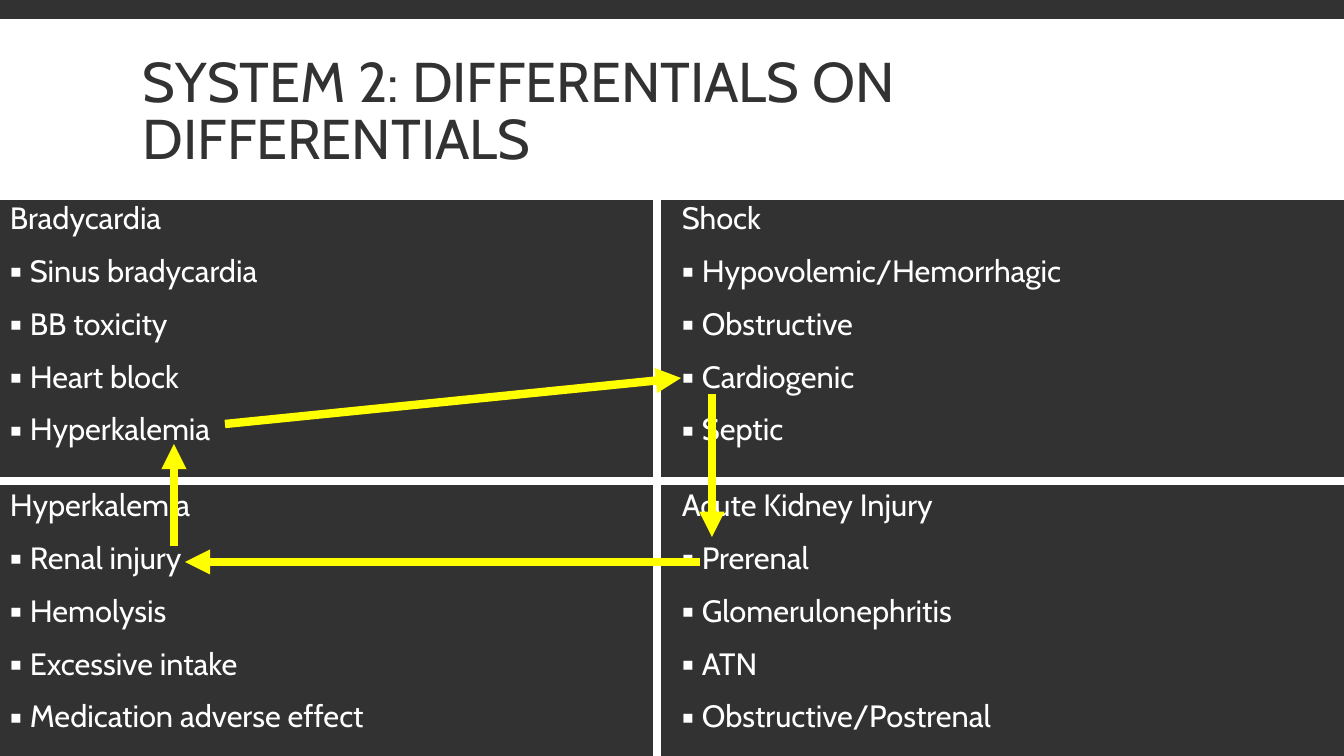
"""Build a slide that links four differential-diagnosis lists with arrows."""
from lxml import etree
from pptx import Presentation
from pptx.dml.color import RGBColor
from pptx.enum.shapes import MSO_CONNECTOR, MSO_SHAPE
from pptx.enum.text import MSO_ANCHOR
from pptx.oxml.ns import qn
from pptx.util import Emu, Pt

STRAIGHT = MSO_CONNECTOR.STRAIGHT
RECTANGLE = MSO_SHAPE.RECTANGLE
TOP, MIDDLE = MSO_ANCHOR.TOP, MSO_ANCHOR.MIDDLE

TITLE = "SYSTEM 2: DIFFERENTIALS ON DIFFERENTIALS"
DIFFERENTIALS = [
    ("Bradycardia", ["Sinus bradycardia", "BB toxicity", "Heart block", "Hyperkalemia"]),
    ("Shock", ["Hypovolemic/Hemorrhagic", "Obstructive", "Cardiogenic", "Septic"]),
    ("Hyperkalemia", ["Renal injury", "Hemolysis", "Excessive intake",
                      "Medication adverse effect"]),
    ("Acute Kidney Injury", ["Prerenal", "Glomerulonephritis", "ATN",
                             "Obstructive/Postrenal"]),
]
CAUSE_ARROWS = [
    ((712, 394), (712, 537)),
    ((700, 562), (185, 562)),
    ((174, 546), (174, 444)),
    ((225, 424), (681, 378)),
]

THEME = {
    "dark": RGBColor(0x32, 0x32, 0x32),
    "light": RGBColor(0xFF, 0xFF, 0xFF),
    "arrow": RGBColor(0xFF, 0xFF, 0x00),
    "font": "Cabin",
    "title_size": Pt(40),
    "list_size": Pt(22),
    "line_width": Pt(6),
}
WIDTH, HEIGHT = 1344, 756
BAND_TOP, BAND_HEIGHT = 19, 181
TITLE_BOX = (133, 31, 1079, 166)
GRID_TOP, QUADRANT_HEIGHT = 198, 287
DIVIDER_X, DIVIDER_Y = 657, 481
INDENT = 20


def px(length):
    """Turn px into EMU."""
    return Emu(round(length * 914400 / 100.8))


def add_text(slide, box, paragraphs, *, size, color, anchor=TOP, spacing=0.9,
             before=0, after=0, bulleted_from=None):
    """Add a text box, with bullets from the given paragraph on."""
    frame = slide.shapes.add_textbox(*map(px, box)).text_frame
    frame.word_wrap = True
    frame.vertical_anchor = anchor
    for index, wording in enumerate(paragraphs):
        paragraph = frame.paragraphs[0] if index == 0 else frame.add_paragraph()
        paragraph.line_spacing = spacing
        paragraph.space_before, paragraph.space_after = Pt(before), Pt(after)
        run = paragraph.add_run()
        run.text = wording
        run.font.name, run.font.size = THEME["font"], size
        run.font.color.rgb = color
        if bulleted_from is not None and index >= bulleted_from:
            add_bullet(paragraph, color)


def add_bullet(paragraph, color):
    """Give a paragraph a hanging square bullet."""
    properties = paragraph._p.get_or_add_pPr()
    properties.set("marL", str(px(INDENT)))
    properties.set("indent", str(-px(INDENT)))
    bullet_color = etree.SubElement(properties, qn("a:buClr"))
    etree.SubElement(bullet_color, qn("a:srgbClr"), val=str(color))
    etree.SubElement(properties, qn("a:buFont"), typeface=THEME["font"])
    etree.SubElement(properties, qn("a:buChar"), char="▪")


def add_line(slide, start, end, color, arrowhead=False):
    """Add a thick straight line, with an arrowhead at its end if asked."""
    connector = slide.shapes.add_connector(STRAIGHT, *map(px, start + end))
    connector.line.color.rgb = color
    connector.line.width = THEME["line_width"]
    if arrowhead:
        etree.SubElement(connector.line._get_or_add_ln(), qn("a:tailEnd"), type="triangle")
    etree.SubElement(connector._element.spPr, qn("a:effectLst"))


def main():
    """Lay out the slide and save it."""
    presentation = Presentation()
    presentation.slide_width, presentation.slide_height = px(WIDTH), px(HEIGHT)
    slide = presentation.slides.add_slide(presentation.slide_layouts[6])
    slide.background.fill.solid()
    slide.background.fill.fore_color.rgb = THEME["dark"]

    title_band = slide.shapes.add_shape(
        RECTANGLE, *map(px, (0, BAND_TOP, WIDTH, BAND_HEIGHT)))
    title_band.shadow.inherit = False
    title_band.fill.solid()
    title_band.fill.fore_color.rgb = THEME["light"]
    title_band.line.fill.background()

    add_line(slide, (DIVIDER_X, GRID_TOP), (DIVIDER_X, HEIGHT), THEME["light"])
    add_line(slide, (0, DIVIDER_Y), (WIDTH, DIVIDER_Y), THEME["light"])

    add_text(slide, TITLE_BOX, [TITLE], size=THEME["title_size"],
             color=THEME["dark"], anchor=MIDDLE, spacing=0.85)

    quadrant_width = WIDTH // 2
    for index, (problem, causes) in enumerate(DIFFERENTIALS):
        row, column = divmod(index, 2)
        quadrant = (column * quadrant_width, GRID_TOP + row * QUADRANT_HEIGHT,
                    quadrant_width, QUADRANT_HEIGHT)
        add_text(slide, quadrant, [problem, *causes], size=THEME["list_size"],
                 color=THEME["light"], before=12, after=2, bulleted_from=1)

    for start, end in CAUSE_ARROWS:
        add_line(slide, start, end, THEME["arrow"], arrowhead=True)

    presentation.save("out.pptx")


if __name__ == "__main__":
    main()
